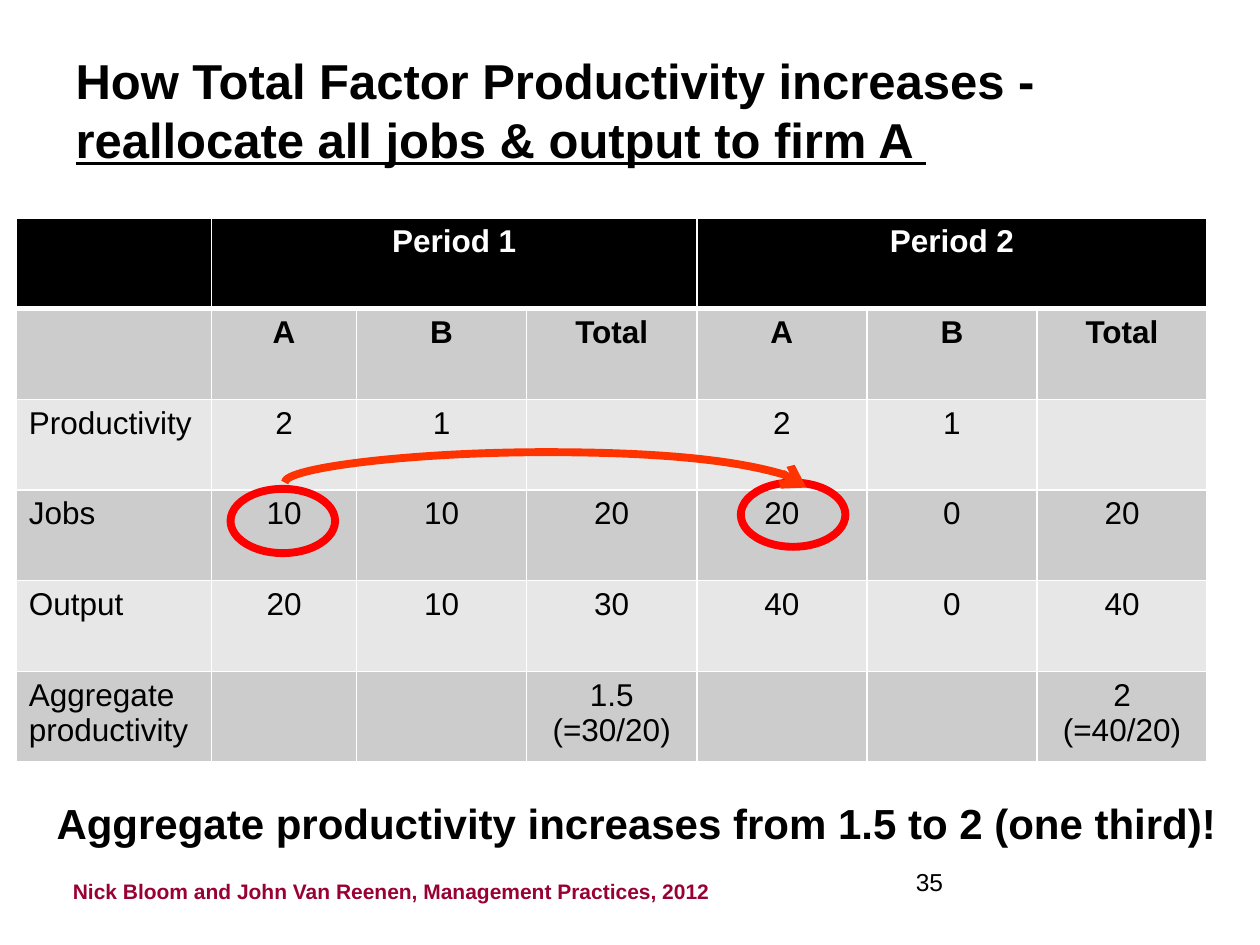
from lxml import etree
from pptx import Presentation
from pptx.dml.color import RGBColor
from pptx.enum.shapes import MSO_CONNECTOR, MSO_SHAPE
from pptx.enum.text import MSO_ANCHOR, MSO_AUTO_SIZE, PP_ALIGN
from pptx.oxml.ns import qn
from pptx.util import Pt

LEFT, CENTER = PP_ALIGN.LEFT, PP_ALIGN.CENTER
TOP, NO_AUTOFIT = MSO_ANCHOR.TOP, MSO_AUTO_SIZE.NONE
OVAL, CURVE = MSO_SHAPE.OVAL, MSO_CONNECTOR.CURVE
rgb = RGBColor.from_string


def write(p, text, size=18, color="000000", bold=False, underline=False, align=LEFT):
    p.alignment = align
    r = p.add_run()
    r.text = text
    r.font.name = "Arial"
    r.font.size = Pt(size)
    r.font.bold = bold
    r.font.underline = underline
    r.font.color.rgb = rgb(color)


def add_border(cell, side, width):
    ln = etree.SubElement(cell._tc.get_or_add_tcPr(), qn(f"a:ln{side}"), w=str(Pt(width)))
    fill = etree.SubElement(ln, qn("a:solidFill"))
    etree.SubElement(fill, qn("a:srgbClr"), val="FFFFFF")


prs = Presentation()
prs.slide_width, prs.slide_height = Pt(720), Pt(540)
s = prs.slides.add_slide(prs.slide_layouts[5])

# Title
title = s.shapes.title
title.left, title.top, title.width, title.height = Pt(36), Pt(21.6), Pt(648), Pt(54)
tf = title.text_frame
tf.auto_size = NO_AUTOFIT
tf.vertical_anchor = TOP
tf.margin_top = Pt(7.2)
p = tf.paragraphs[0]
write(p, "How Total Factor Productivity increases - ", size=28, bold=True)
write(p, "reallocate all jobs & output to firm A ", size=28, bold=True, underline=True)

# Table
rows = [
    ["", "Period 1", "", "", "Period 2", "", ""],
    ["", "A", "B", "Total", "A", "B", "Total"],
    ["Productivity", "2", "1", "", "2", "1", ""],
    ["Jobs", "10", "10", "20", "20", "0", "20"],
    ["Output", "20", "10", "30", "40", "0", "40"],
    ["Aggregate productivity", "", "", "1.5 (=30/20)", "", "", "2\n(=40/20)"],
]
col_widths = [111.6, 82.8] + [97.2] * 5
row_height = 51.84
table = s.shapes.add_table(len(rows), len(col_widths), Pt(9.36), Pt(124.56),
                           Pt(sum(col_widths)), Pt(row_height * len(rows))).table
table.first_row = table.horz_banding = False
for column, width in zip(table.columns, col_widths):
    column.width = Pt(width)
for i, row in enumerate(rows):
    table.rows[i].height = Pt(row_height)
    for j, text in enumerate(row):
        cell = table.cell(i, j)
        for side in "LRTB":
            heavy = (i, side) in [(0, "B"), (1, "T")]
            add_border(cell, side, 3 if heavy else 1)
        cell.fill.solid()
        cell.fill.fore_color.rgb = rgb("000000" if i == 0 else "CCCCCC" if i % 2 else "E7E7E7")
        for k, line in enumerate(text.split("\n")):
            tf = cell.text_frame
            p = tf.add_paragraph() if k else tf.paragraphs[0]
            write(p, line, color="000000" if i else "FFFFFF", bold=i < 2,
                  align=CENTER if j else LEFT)
for first in (1, 4):
    table.cell(0, first).merge(table.cell(0, first + 2))

# Conclusion, footer and page number
for text, x, y, w, h, size, color, bold in [
    ("Aggregate productivity increases from 1.5 to 2 (one third)!",
     25.2, 452.16, 683.28, 36, 24, "000000", True),
    ("Nick Bloom and John Van Reenen, Management Practices, 2012",
     34.56, 498.24, 381.6, 21.6, 12, "990033", True),
    ("35", 516.24, 491.76, 149.76, 36, 14, "000000", False),
]:
    tf = s.shapes.add_textbox(Pt(x), Pt(y), Pt(w), Pt(h)).text_frame
    tf.word_wrap = not bold
    write(tf.paragraphs[0], text, size=size, color=color, bold=bold)

# Rings around the jobs of firm A
for x, y in [(131.76, 279.36), (423.36, 275.76)]:
    ring = s.shapes.add_shape(OVAL, Pt(x), Pt(y), Pt(59.76), Pt(36.72))
    ring.shadow.inherit = False
    ring.fill.background()
    ring.line.color.rgb = rgb("FF0000")
    ring.line.width = Pt(4.5)

# Curved arrow between the rings: an upright connector turned by 270 degrees
arrow = s.shapes.add_connector(CURVE, Pt(313.2), Pt(128.16), Pt(310.32), Pt(426.24))
arrow.line.color.rgb = rgb("FF3300")
arrow.line.width = Pt(4.5)
spPr = arrow.element.spPr
spPr.find(qn("a:xfrm")).set("rot", str(270 * 60000))
guides = spPr.find(qn("a:prstGeom")).get_or_add_avLst()
etree.SubElement(guides, qn("a:gd"), name="adj1", fmla="val -600000")
etree.SubElement(spPr.find(qn("a:ln")), qn("a:tailEnd"), type="arrow")
etree.SubElement(spPr, qn("a:effectLst"))

prs.save("out.pptx")
